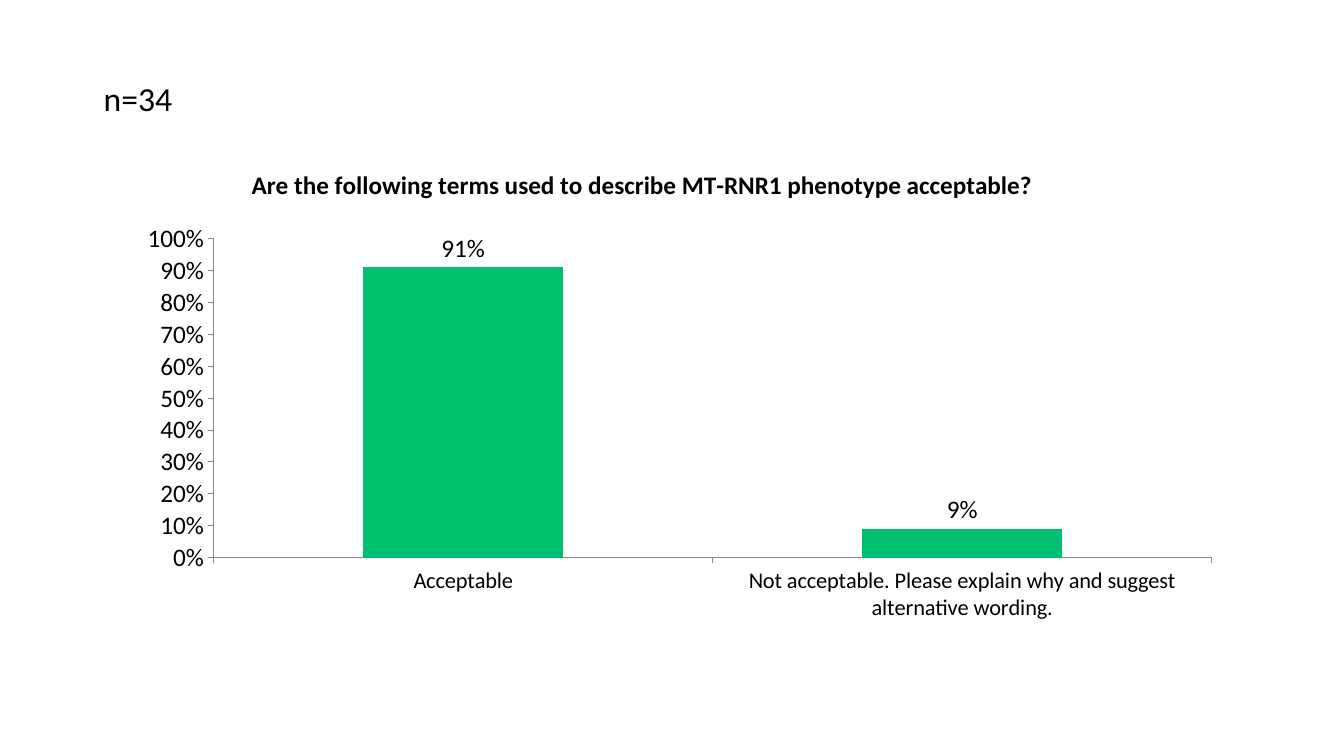
import dataclasses

import lxml.etree
import pptx
import pptx.chart.data
import pptx.dml.color
import pptx.enum.chart
import pptx.enum.text
import pptx.oxml.ns
import pptx.util


@dataclasses.dataclass(frozen=True)
class Theme:
    """Hold the colours, font and type sizes of the slide."""
    font: str = "Calibri"
    ink: str = "000000"
    bar: str = "00BF6F"
    axis: str = "888888"
    note_size: int = 24
    chart_size: int = 18
    category_size: int = 16


THEME = Theme()


def colour(code):
    """Turn a hex code into a colour."""
    return pptx.dml.color.RGBColor.from_string(code)


def apply(target, values):
    """Set each named attribute on the target."""
    for name, value in values.items():
        setattr(target, name, value)


def style_font(font, size, bold=False):
    """Give a font the theme face and ink."""
    apply(font, {"name": THEME.font, "size": pptx.util.Pt(size), "bold": bold})
    font.color.rgb = colour(THEME.ink)


def set_layout(parent, index, values):
    """Place a chart part by fractions of the chart box."""
    qn = pptx.oxml.ns.qn
    for old in parent.findall(qn("c:layout")):
        parent.remove(old)
    layout = lxml.etree.Element(qn("c:layout"))
    manual = lxml.etree.SubElement(layout, qn("c:manualLayout"))
    for name, value in values.items():
        lxml.etree.SubElement(manual, qn(f"c:{name}")).set("val", str(value))
    parent.insert(index, layout)


def style_axis(axis, size):
    """Draw an axis with outside ticks and no gridlines."""
    apply(axis, {
        "has_major_gridlines": False,
        "major_tick_mark": pptx.enum.chart.XL_TICK_MARK.OUTSIDE,
        "minor_tick_mark": pptx.enum.chart.XL_TICK_MARK.NONE,
    })
    axis.format.line.color.rgb = colour(THEME.axis)
    axis.format.line.width = pptx.util.Pt(0.75)
    style_font(axis.tick_labels.font, size)


def add_sample_note(page, box):
    """Add the sample size above the chart."""
    frame = page.shapes.add_textbox(*box).text_frame
    apply(frame, {"word_wrap": False,
                  "auto_size": pptx.enum.text.MSO_AUTO_SIZE.SHAPE_TO_FIT_TEXT})
    span = frame.paragraphs[0].add_run()
    span.text = "n=34"
    style_font(span.font, THEME.note_size)


def add_answer_chart(page, box):
    """Add the column chart of answer shares."""
    answers = pptx.chart.data.CategoryChartData(number_format="0%")
    answers.categories = [
        "Acceptable",
        "Not acceptable. Please explain why and suggest alternative wording.",
    ]
    answers.add_series("Series 1", (0.91, 0.09))
    chart = page.shapes.add_chart(
        pptx.enum.chart.XL_CHART_TYPE.COLUMN_CLUSTERED, *box, answers).chart
    style_font(chart.font, THEME.chart_size)
    chart.has_legend = False

    span = chart.chart_title.text_frame.paragraphs[0].add_run()
    span.text = "Are the following terms used to describe MT-RNR1 phenotype acceptable?"
    style_font(span.font, THEME.chart_size, bold=True)
    chart.chart_title.include_in_layout = False

    style_axis(chart.category_axis, THEME.category_size)
    style_axis(chart.value_axis, THEME.chart_size)
    apply(chart.value_axis, {"minimum_scale": 0, "maximum_scale": 1, "major_unit": 0.1})
    apply(chart.value_axis.tick_labels,
          {"number_format": "0%", "number_format_is_linked": False})

    plot = chart.plots[0]
    apply(plot, {"gap_width": 150, "vary_by_categories": False, "has_data_labels": True})
    fill = plot.series[0].format.fill
    fill.solid()
    fill.fore_color.rgb = colour(THEME.bar)
    apply(plot.data_labels, {
        "show_value": True,
        "number_format": "0%",
        "number_format_is_linked": False,
        "position": pptx.enum.chart.XL_LABEL_POSITION.OUTSIDE_END,
    })
    style_font(plot.data_labels.font, THEME.chart_size)

    root = chart.element.find(pptx.oxml.ns.qn("c:chart"))
    set_layout(root.find(pptx.oxml.ns.qn("c:title")), 1,
               {"xMode": "edge", "yMode": "edge", "x": 0.11, "y": 0.02})
    set_layout(root.find(pptx.oxml.ns.qn("c:plotArea")), 0,
               {"layoutTarget": "inner", "xMode": "edge", "yMode": "edge",
                "x": 0.08, "y": 0.18, "w": 0.9, "h": 0.67})


def main():
    """Build and save the slide."""
    inches = pptx.util.Inches
    deck = pptx.Presentation()
    apply(deck, {"slide_width": inches(13.33), "slide_height": inches(7.5)})
    page = deck.slides.add_slide(deck.slide_layouts[6])
    add_answer_chart(page, [inches(n) for n in (1.24, 1.52, 11, 4.72)])
    add_sample_note(page, [inches(n) for n in (0.93, 0.72, 0.89, 0.5)])
    deck.save("out.pptx")


if __name__ == "__main__":
    main()
